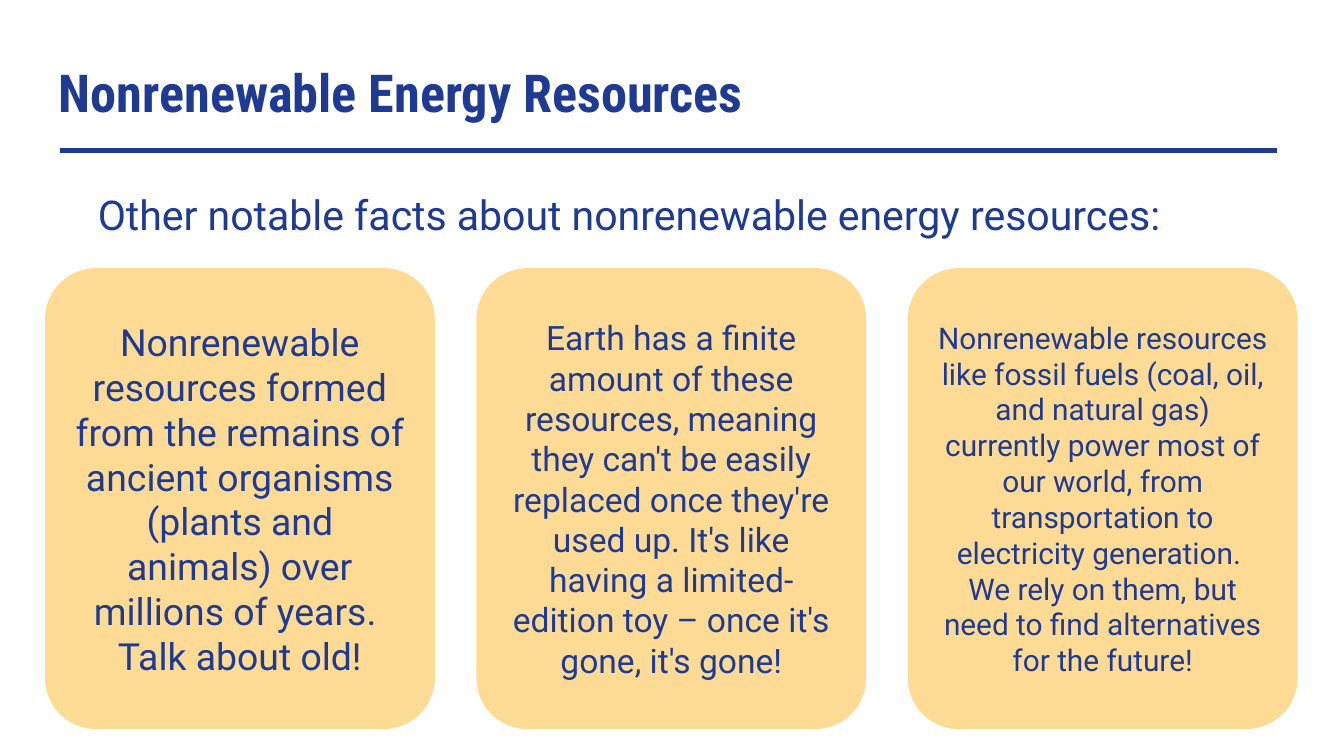
from dataclasses import dataclass

from lxml.etree import SubElement
from pptx import Presentation
from pptx.dml.color import RGBColor as Rgb
from pptx.enum.shapes import MSO_CONNECTOR as Conn, MSO_SHAPE as Kind
from pptx.enum.text import MSO_ANCHOR as Anchor, PP_ALIGN as Align
from pptx.oxml.ns import qn
from pptx.slide import Slide
from pptx.text.text import TextFrame
from pptx.util import Inches, Pt

COLORS = {"ink": "1F3A93", "card": "FEDB95"}
WIDE = 10
HIGH = WIDE * 9 / 16
LEFT, TOP = 0.34, 2
CARD_W, CARD_H, STEP = 2.89, 3.42, 3.21


@dataclass
class Label:
    text: str
    size: int
    font: str = "Roboto"
    bold: bool = False


@dataclass
class Box:
    left: float
    top: float
    width: float
    height: float

    def emu(self) -> list[int]:
        return [Inches(v) for v in (self.left, self.top, self.width, self.height)]


CARDS = [
    Label("Nonrenewable resources formed from the remains of ancient organisms "
          "(plants and animals) over millions of years.  Talk about old!", 20),
    Label("Earth has a finite amount of these resources, meaning they can't be "
          "easily replaced once they're used up. It's like having a "
          "limited-edition toy – once it's gone, it's gone!", 18),
    Label("Nonrenewable resources like fossil fuels (coal, oil, and natural gas) "
          "currently power most of our world, from transportation to electricity "
          "generation.  We rely on them, but need to find alternatives for the "
          "future!", 16),
]


def color(name: str) -> Rgb:
    return Rgb.from_string(COLORS[name])


def write(frame: TextFrame, label: Label, align: Align, anchor: Anchor) -> None:
    frame.word_wrap = True
    frame.vertical_anchor = anchor
    frame.margin_left = frame.margin_right = Inches(0.1)
    frame.margin_top = frame.margin_bottom = Inches(0.1)
    para = frame.paragraphs[0]
    para.alignment = align
    run = para.add_run()
    run.text = label.text
    font = run.font
    font.name, font.size, font.bold = label.font, Pt(label.size), label.bold
    font.color.rgb = color("ink")


def add_text(slide: Slide, box: Box, label: Label) -> None:
    shape = slide.shapes.add_textbox(*box.emu())
    write(shape.text_frame, label, Align.LEFT, Anchor.TOP)


def add_card(slide: Slide, col: int, label: Label) -> None:
    box = Box(LEFT + col * STEP, TOP, CARD_W, CARD_H)
    card = slide.shapes.add_shape(Kind.ROUNDED_RECTANGLE, *box.emu())
    card.adjustments[0] = 0.13
    card.shadow.inherit = False
    card.fill.solid()
    card.fill.fore_color.rgb = color("card")
    card.line.color.rgb = color("card")
    card.line.width = Pt(0.75)
    write(card.text_frame, label, Align.CENTER, Anchor.MIDDLE)


def add_rule(slide: Slide, start: float, end: float, y: float) -> None:
    rule = slide.shapes.add_connector(
        Conn.STRAIGHT, Inches(start), Inches(y), Inches(end), Inches(y))
    rule.line.color.rgb = color("ink")
    rule.line.width = Pt(2.25)
    SubElement(rule._element.spPr, qn("a:effectLst"))


def main() -> None:
    deck = Presentation()
    deck.slide_width, deck.slide_height = Inches(WIDE), Inches(HIGH)
    slide = deck.slides.add_slide(deck.slide_layouts[6])
    add_text(slide, Box(LEFT, 0.35, WIDE - 2 * LEFT, 0.63),
             Label("Nonrenewable Energy Resources", 28, "Roboto Condensed", True))
    add_rule(slide, 0.45, 9.5, 1.12)
    add_text(slide, Box(0.63, 1.31, 8.8, 0.57),
             Label("Other notable facts about nonrenewable energy resources:", 22))
    for col, label in enumerate(CARDS):
        add_card(slide, col, label)
    deck.save("out.pptx")


if __name__ == "__main__":
    main()
